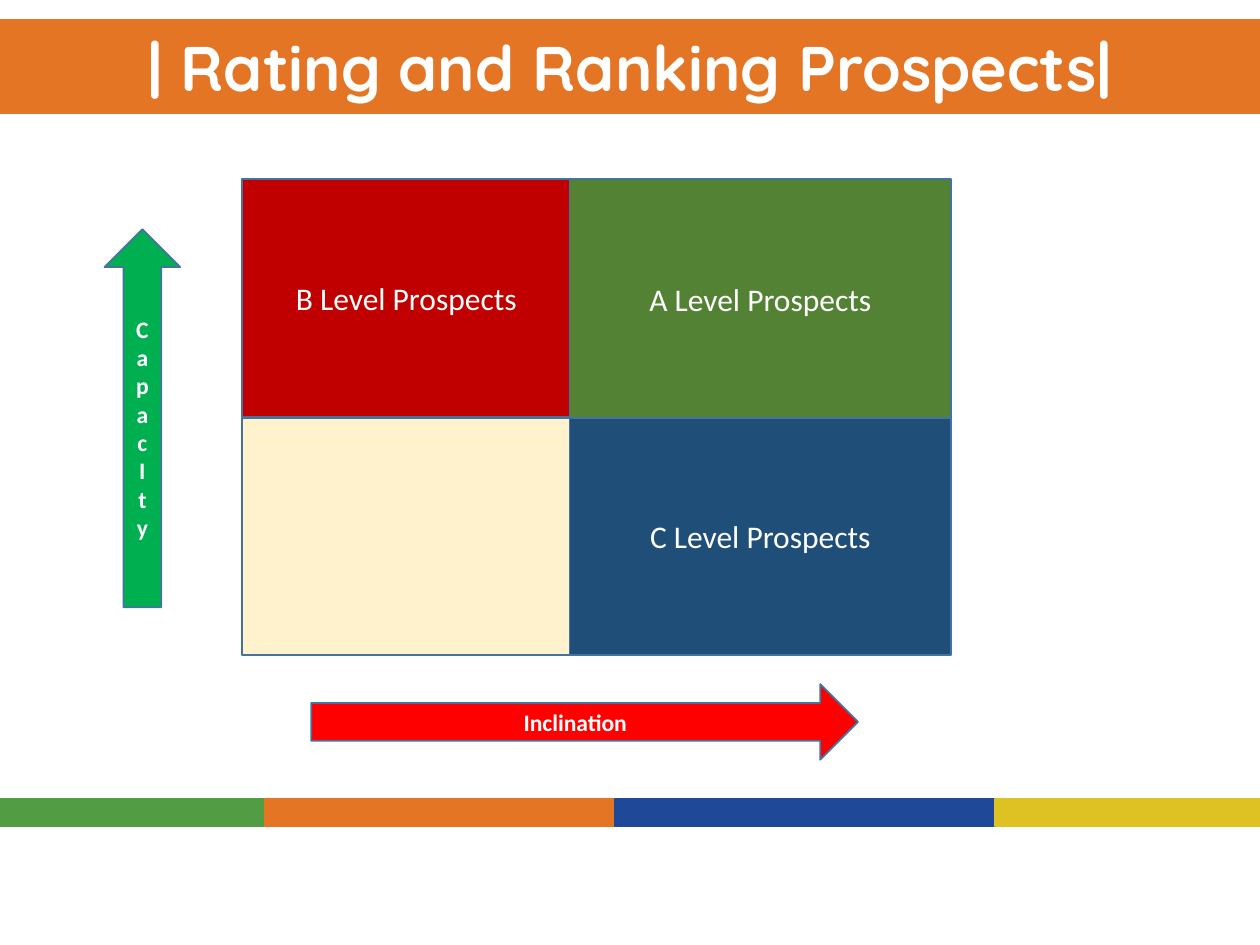
"""Build a slide that rates prospects on a capacity and inclination grid."""
from dataclasses import dataclass

from pptx import Presentation
from pptx.dml.color import RGBColor
from pptx.enum.shapes import MSO_SHAPE as SHAPE
from pptx.enum.text import MSO_ANCHOR as ANCHOR, PP_ALIGN as ALIGN
from pptx.util import Inches, Pt


@dataclass(frozen=True)
class Theme:
    white: str = "FFFFFF"
    outline: str = "43739E"
    green: str = "529C43"
    orange: str = "E37524"
    blue: str = "204899"
    yellow: str = "DEC123"
    level_a: str = "548235"
    level_b: str = "C00000"
    level_c: str = "1F4E79"
    unrated: str = "FFF2CC"
    capacity: str = "00B050"
    inclination: str = "FF0000"
    title_font: str = "Quicksand"
    body_font: str = "Calibri"
    title_size: float = 36
    level_size: float = 18
    axis_size: float = 13.5


theme = Theme()
prs = Presentation()
prs.slide_width, prs.slide_height = Inches(10), Inches(7.5)
s = prs.slides.add_slide(prs.slide_layouts[6])


def add_block(kind, box, fill, line):
    sp = s.shapes.add_shape(kind, *(Inches(v) for v in box))
    sp.shadow.inherit = False
    sp.fill.solid()
    sp.fill.fore_color.rgb = RGBColor.from_string(fill)
    sp.line.color.rgb = RGBColor.from_string(line)
    sp.line.width = Pt(1)
    return sp


def add_text(sp, lines, size, font=theme.body_font, bold=False):
    tf = sp.text_frame
    tf.word_wrap = True
    tf.vertical_anchor = ANCHOR.MIDDLE
    for i, line in enumerate(lines):
        p = tf.add_paragraph() if i else tf.paragraphs[0]
        p.alignment = ALIGN.CENTER
        r = p.add_run()
        r.text = line
        r.font.name, r.font.size, r.font.bold = font, Pt(size), bold
        r.font.color.rgb = RGBColor.from_string(theme.white)


stripe_edges = [0, 2.1, 4.88, 7.9, 10]
stripe_colors = [theme.green, theme.orange, theme.blue, theme.yellow]
for left, right, color in zip(stripe_edges, stripe_edges[1:], stripe_colors):
    add_block(SHAPE.RECTANGLE, (left, 6.34, right - left, 0.22), color, color)

banner = add_block(SHAPE.RECTANGLE, (0, 0.16, 10, 0.74), theme.orange, theme.orange)
add_text(banner, ["| Rating and Ranking Prospects|"], theme.title_size, theme.title_font, True)

levels = [
    ("B Level Prospects", (1.92, 1.42, 2.61, 1.89), theme.level_b),
    ("", (1.92, 3.32, 2.61, 1.88), theme.unrated),
    ("C Level Prospects", (4.52, 3.31, 3.03, 1.89), theme.level_c),
    ("A Level Prospects", (4.52, 1.42, 3.03, 1.9), theme.level_a),
]
for label, box, color in levels:
    sp = add_block(SHAPE.RECTANGLE, box, color, theme.outline)
    if label:
        add_text(sp, [label], theme.level_size)

capacity = add_block(SHAPE.UP_ARROW, (0.83, 1.82, 0.6, 3), theme.capacity, theme.outline)
add_text(capacity, ["Capac", "I", "ty"], theme.axis_size, bold=True)

inclination = add_block(SHAPE.UP_ARROW, (4.34, 3.56, 0.6, 4.34), theme.inclination, theme.outline)
inclination.rotation = 90
add_text(inclination, ["Inclination"], theme.axis_size, bold=True)
inclination.text_frame._txBody.bodyPr.set("vert", "vert270")

prs.save("out.pptx")
